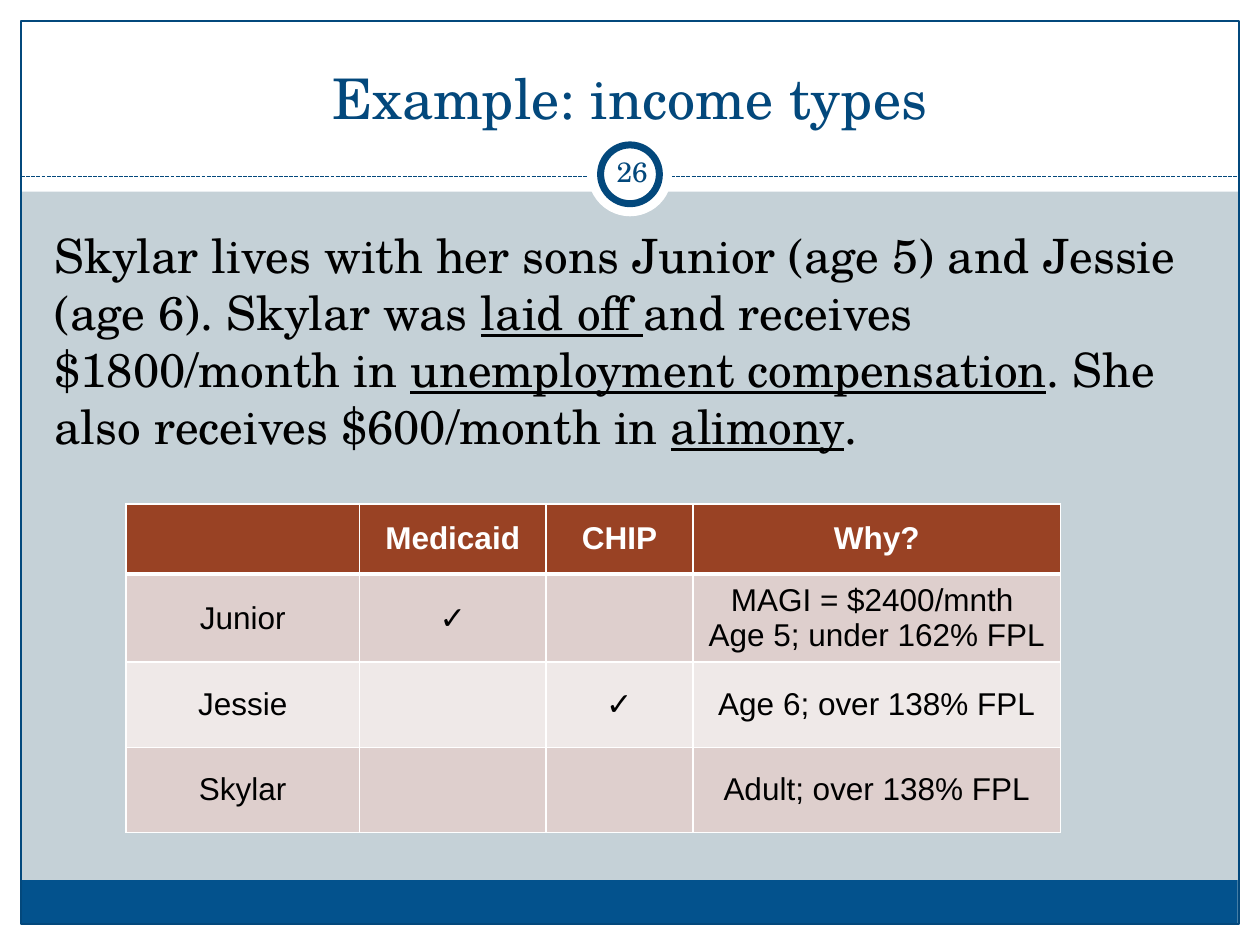
from lxml.etree import SubElement
from pptx import Presentation
from pptx.dml.color import RGBColor as Rgb
from pptx.enum.dml import MSO_LINE as Dash
from pptx.enum.shapes import MSO_CONNECTOR as Connector, MSO_SHAPE as Shape
from pptx.enum.text import MSO_ANCHOR as Anchor, PP_ALIGN as Align
from pptx.oxml.ns import qn
from pptx.util import Pt

COLORS = {
    name: Rgb.from_string(value)
    for name, value in {
        "background": "C5D1D7", "white": "FFFFFF", "black": "000000",
        "navy": "03487C", "footer": "03528D", "header": "994224",
        "band": "DECFCD", "light band": "EFE9E8",
    }.items()
}
SERIF, SANS = "TeX Gyre Schola", "Arial"


def add_spans(para, spans, **formats):
    """Add (text, underlined) spans that share one font format."""
    color = formats.pop("color")
    for text, underlined in spans:
        span = para.add_run()
        span.text = text
        span.font.color.rgb = COLORS[color]
        for name, value in {**formats, "underline": underlined}.items():
            setattr(span.font, name, value)


def set_borders(cell, widths):
    properties = cell._tc.get_or_add_tcPr()
    fill = properties.find(qn("a:solidFill"))
    for side, width in widths.items():
        line = SubElement(properties, qn(f"a:ln{side}"), w=str(Pt(width)))
        solid = SubElement(line, qn("a:solidFill"))
        SubElement(solid, qn("a:srgbClr"), val=str(COLORS["white"]))
    properties.append(fill)  # the fill follows the borders


deck = Presentation()
deck.slide_width, deck.slide_height = Pt(720), Pt(540)
page = deck.slides.add_slide(deck.slide_layouts[6])
page.background.fill.solid()
page.background.fill.fore_color.rgb = COLORS["background"]

# Frame, with the dashed rule behind the number badge
rectangles = [
    (0, 528, 720, 12, "white", None),
    (0, 0, 720, 109.5, "white", None),
    (0, 0, 12, 540, "white", None),
    (708, 0, 12, 540, "white", None),
    (11.75, 503, 695.5, 24.5, "footer", None),
    (12, 12, 696, 516, None, 0.75),
]
badge = [(336, 75.6, 48, 48, "white", None), (343.2, 82.8, 33.6, 33.6, "white", 4)]

for kind, parts in ((Shape.RECTANGLE, rectangles), (Shape.OVAL, badge)):
    if kind == Shape.OVAL:
        rule = page.shapes.add_connector(
            Connector.STRAIGHT, Pt(12), Pt(100.8), Pt(708), Pt(100.8))
        rule.line.color.rgb = COLORS["navy"]
        rule.line.width = Pt(0.75)
        rule.line.dash_style = Dash.SQUARE_DOT
        SubElement(rule._element.spPr, qn("a:effectLst"))
    for *place, fill, line_width in parts:
        shape = page.shapes.add_shape(kind, *map(Pt, place))
        shape.shadow.inherit = False
        if fill:
            shape.fill.solid()
            shape.fill.fore_color.rgb = COLORS[fill]
        else:
            shape.fill.background()
        if line_width:
            shape.line.color.rgb = COLORS["navy"]
            shape.line.width = Pt(line_width)
        else:
            shape.line.fill.background()

# Title, story and slide number
story = [
    ("Skylar lives with her sons Junior (age 5) and Jessie (age 6). Skylar was ", False),
    ("laid off ", True),
    ("and receives $1800/month in ", False),
    ("unemployment compensation", True),
    (". She also receives $600/month in ", False),
    ("alimony", True),
    (".", False),
]
texts = [
    ((24, 18, 672, 60), [("Example: income types", False)], 32, "navy",
     {"vertical_anchor": Anchor.BOTTOM}, {"alignment": Align.CENTER}),
    ((24, 126, 669.6, 390), story, 27, "black",
     {"vertical_anchor": Anchor.TOP}, {"space_before": Pt(5.4)}),
    ((343.2, 80.6, 36, 34.6), [("26", False)], 16, "navy",
     {"vertical_anchor": Anchor.MIDDLE, "margin_left": Pt(3.6), "margin_right": Pt(3.6)},
     {"alignment": Align.CENTER}),
]
for place, spans, size, color, frame_format, para_format in texts:
    frame = page.shapes.add_textbox(*map(Pt, place)).text_frame
    para = frame.paragraphs[0]
    for target, formats in ((frame, {"word_wrap": True, **frame_format}), (para, para_format)):
        for name, value in formats.items():
            setattr(target, name, value)
    add_spans(para, spans, size=Pt(size), name=SERIF, color=color)

# Eligibility table
rows = [
    ["", "Medicaid", "CHIP", "Why?"],
    ["Junior", "✓", "", "MAGI = $2400/mnth \nAge 5; under 162% FPL"],
    ["Jessie", "", "✓", "Age 6; over 138% FPL"],
    ["Skylar", "", "", "Adult; over 138% FPL"],
]
column_widths = [133.4, 106.6, 84, 210]
row_heights = [40, 48.6, 48.6, 48.6]
table = page.shapes.add_table(
    len(rows), len(column_widths), Pt(72), Pt(288),
    Pt(sum(column_widths)), Pt(sum(row_heights))).table
for column, width in zip(table.columns, column_widths):
    column.width = Pt(width)
for index, (row, height) in enumerate(zip(table.rows, row_heights)):
    row.height = Pt(height)
    is_header = index == 0
    fill = "header" if is_header else "band" if index % 2 else "light band"
    top, bottom = 3 if index == 1 else 1, 3 if is_header else 1
    for cell, text in zip(row.cells, rows[index]):
        cell.vertical_anchor = Anchor.MIDDLE
        cell.fill.solid()
        cell.fill.fore_color.rgb = COLORS[fill]
        set_borders(cell, {"L": 1, "R": 1, "T": top, "B": bottom})
        for number, line in enumerate(text.split("\n")):
            frame = cell.text_frame
            para = frame.add_paragraph() if number else frame.paragraphs[0]
            para.alignment = Align.CENTER
            if line:
                add_spans(para, [(line, False)], size=Pt(18), name=SANS, bold=is_header,
                          color="white" if is_header else "black")

deck.save("out.pptx")
